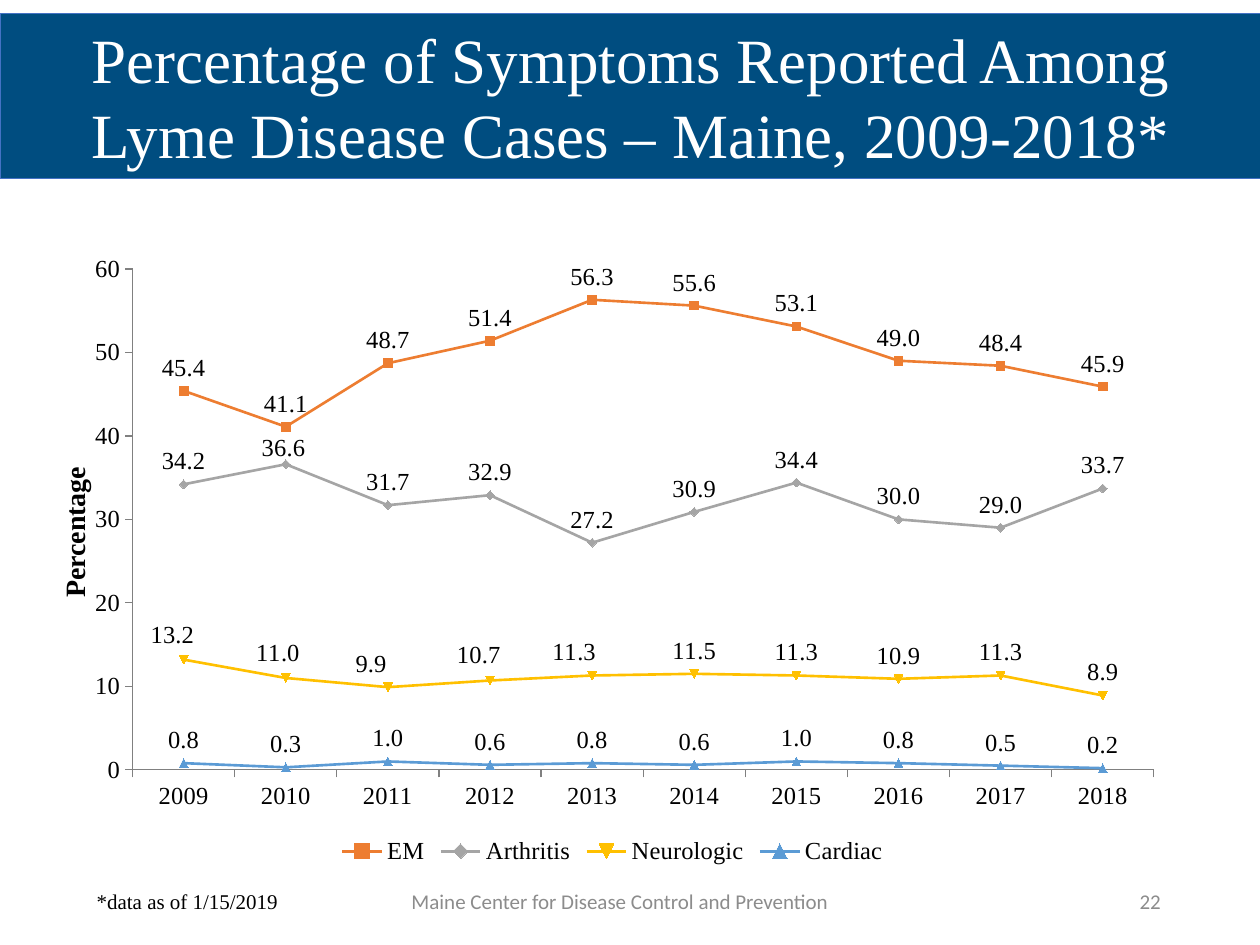
from dataclasses import dataclass

from lxml import etree
from pptx import Presentation
from pptx.chart import data
from pptx.dml import color
from pptx.enum import chart as ec, text
from pptx.oxml import ns
from pptx.util import Cm, Pt


@dataclass
class Theme:
    serif: str = "Times New Roman"
    sans: str = "Calibri"
    band: str = "004D80"
    edge: str = "4472C4"
    white: str = "FFFFFF"
    black: str = "000000"
    gray: str = "8C8C8C"
    axis: str = "808080"
    head: int = 36
    label: int = 16
    chart: int = 14
    small: int = 12


YEARS = [str(year) for year in range(2009, 2019)]
SERIES = {
    "EM": ("ED7D31", [45.4, 41.1, 48.7, 51.4, 56.3, 55.6, 53.1, 49.0, 48.4, 45.9]),
    "Arthritis": ("A5A5A5", [34.2, 36.6, 31.7, 32.9, 27.2, 30.9, 34.4, 30.0, 29.0, 33.7]),
    "Neurologic": ("FFC000", [13.2, 11.0, 9.9, 10.7, 11.3, 11.5, 11.3, 10.9, 11.3, 8.9]),
    "Cardiac": ("5B9BD5", [0.8, 0.3, 1.0, 0.6, 0.8, 0.6, 1.0, 0.8, 0.5, 0.2]),
}
SHIFTS = {
    "Arthritis": {1: (-0.002, 0.01)},
    "Neurologic": {0: (-0.01, -0.003), 1: (-0.007, -0.003), 2: (-0.015, 0),
                   3: (-0.01, -0.003), 4: (-0.016, 0)},
}


def rgb(code):
    return color.RGBColor.from_string(code)


def apply(item, **values):
    for name, value in values.items():
        setattr(item, name, value)


def place(item, box):
    apply(item, **dict(zip(("left", "top", "width", "height"), map(Cm, box))))


def style(font, face, size, code, bold=False):
    apply(font, name=face, size=Pt(size), bold=bold)
    font.color.rgb = rgb(code)


def node(tag, **values):
    item = etree.Element(ns.qn(f"c:{tag}"))
    for name, value in values.items():
        item.set(name, str(value))
    return item


def layout(**values):
    outer, inner = node("layout"), node("manualLayout")
    outer.append(inner)
    for name, value in values.items():
        inner.append(node(name, val=value))
    return outer


class Deck:
    def __init__(self, theme):
        self.theme = theme
        self.file = Presentation()
        apply(self.file, slide_width=Cm(25.4), slide_height=Cm(19.05))
        self.slide = self.file.slides.add_slide(self.file.slide_layouts[5])

    def title(self, words, box):
        look, shape = self.theme, self.slide.shapes.title
        place(shape, box)
        shape.fill.solid()
        shape.fill.fore_color.rgb = rgb(look.band)
        shape.line.color.rgb = rgb(look.edge)
        shape.line.width = Pt(0.5)
        frame = shape.text_frame
        frame.text = words
        apply(frame, word_wrap=True, auto_size=text.MSO_AUTO_SIZE.NONE,
              vertical_anchor=text.MSO_ANCHOR.MIDDLE,
              margin_left=Cm(0.5), margin_right=Cm(0.5))
        para = frame.paragraphs[0]
        para.alignment = text.PP_ALIGN.CENTER
        style(para.runs[0].font, look.serif, look.head, look.white)

    def note(self, words, box, face, code, align, anchor=text.MSO_ANCHOR.MIDDLE):
        frame = self.slide.shapes.add_textbox(*map(Cm, box)).text_frame
        frame.text = words
        apply(frame, word_wrap=True, vertical_anchor=anchor)
        para = frame.paragraphs[0]
        para.alignment = align
        style(para.runs[0].font, face, self.theme.small, code)

    def chart(self, box):
        look = self.theme
        table = data.CategoryChartData(number_format="0.0")
        table.categories = YEARS
        for name, (_, values) in SERIES.items():
            table.add_series(name, values)
        chart = self.slide.shapes.add_chart(
            ec.XL_CHART_TYPE.LINE_MARKERS, *map(Cm, box), table).chart
        style(chart.font, look.serif, look.chart, look.black)
        apply(chart, has_title=False, has_legend=True)
        apply(chart.legend, position=ec.XL_LEGEND_POSITION.BOTTOM, include_in_layout=False)
        chart.plots[0].vary_by_categories = False
        area = chart.plots[0]._element.getparent()
        for old in area.findall(ns.qn("c:layout")):
            area.remove(old)
        area.insert(0, layout(layoutTarget="inner", xMode="edge", yMode="edge",
                              x=0.073, y=0.093, w=0.909, h=0.756))
        self.axes(chart)
        for series in chart.plots[0].series:
            self.line(series)

    def axes(self, chart):
        look = self.theme
        for axis in (chart.category_axis, chart.value_axis):
            apply(axis, has_major_gridlines=False,
                  major_tick_mark=ec.XL_TICK_MARK.OUTSIDE,
                  minor_tick_mark=ec.XL_TICK_MARK.NONE)
            axis.format.line.color.rgb = rgb(look.axis)
            axis.format.line.width = Pt(0.75)
        axis = chart.value_axis
        apply(axis, minimum_scale=0, maximum_scale=60, major_unit=10)
        apply(axis.tick_labels, number_format="0", number_format_is_linked=False)
        frame = axis.axis_title.text_frame
        frame.text = "Percentage"
        style(frame.paragraphs[0].runs[0].font, look.serif, look.label, look.black, True)
        title = axis.axis_title._element
        for old in title.findall(ns.qn("c:layout")):
            title.remove(old)
        title.insert(1, layout(xMode="edge", yMode="edge", x=0.001, y=0.385))

    def line(self, series):
        look = self.theme
        tint = rgb(SERIES[series.name][0])
        series.smooth = False
        series.format.line.color.rgb = tint
        series.format.line.width = Pt(1.5)
        mark = series.marker
        apply(mark, style=ec.XL_MARKER_STYLE.AUTOMATIC, size=5)
        mark.format.fill.solid()
        mark.format.fill.fore_color.rgb = tint
        mark.format.line.color.rgb = tint
        above = ec.XL_LABEL_POSITION.ABOVE
        labels = series.data_labels
        apply(labels, show_value=True, position=above,
              number_format="0.0", number_format_is_linked=False)
        style(labels.font, look.serif, look.chart, look.black)
        for index, (x, y) in SHIFTS.get(series.name, {}).items():
            label = series.points[index].data_label
            label.position = above
            style(label.font, look.serif, look.chart, look.black)
            item = series._element.xpath(f"c:dLbls/c:dLbl[c:idx/@val='{index}']")[0]
            item.insert(1, layout(x=x, y=y))
            item.insert(2, node("numFmt", formatCode="0.0", sourceLinked=0))


def main():
    look = Theme()
    deck = Deck(look)
    align = text.PP_ALIGN
    deck.title("Percentage of Symptoms Reported Among Lyme Disease Cases – Maine, 2009-2018*",
               (0, 0.27, 25.43, 3.33))
    deck.note("Maine Center for Disease Control and Prevention",
              (7.42, 17.65, 10.16, 1.02), look.sans, look.gray, align.CENTER)
    deck.note("22", (17.93, 17.65, 5.72, 1.02), look.sans, look.gray, align.RIGHT)
    deck.note("*data as of 1/15/2019", (1.7, 17.78, 6.78, 0.76),
              look.serif, look.black, align.LEFT, text.MSO_ANCHOR.TOP)
    deck.chart((1.02, 4.18, 22.65, 13.36))
    deck.file.save("out.pptx")


if __name__ == "__main__":
    main()
